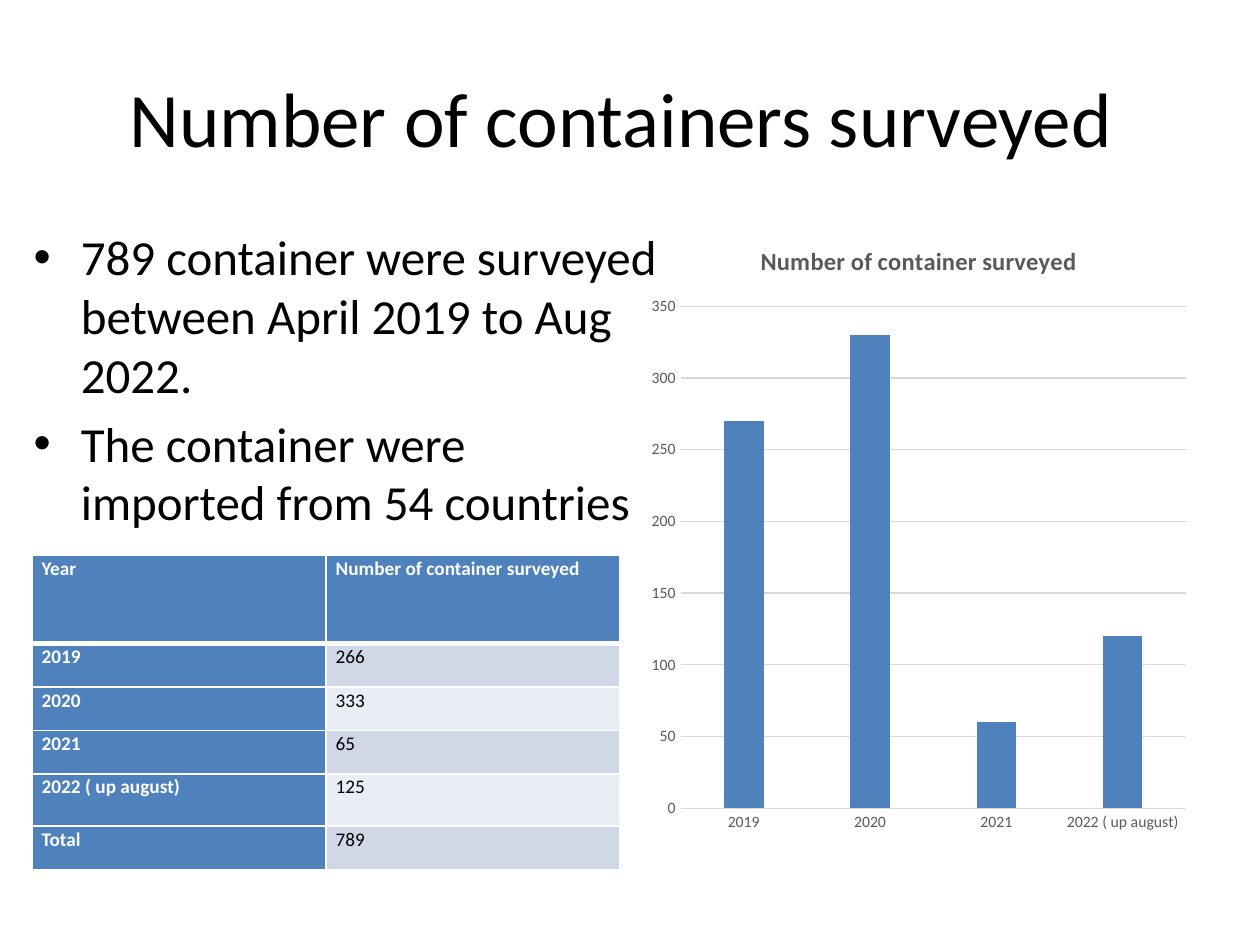
from dataclasses import dataclass
from lxml.etree import SubElement as Sub
from pptx import Presentation
from pptx.chart.data import CategoryChartData as Data
from pptx.dml.color import RGBColor as Rgb
from pptx.enum.chart import XL_CHART_TYPE as Kind, XL_TICK_MARK as Tick
from pptx.enum.text import MSO_ANCHOR as Anchor, MSO_AUTO_SIZE as Fit, PP_ALIGN as Align
from pptx.oxml.ns import qn
from pptx.util import Pt


@dataclass(frozen=True)
class Theme:
    font: str = "Calibri"
    black: str = "000000"
    white: str = "FFFFFF"
    blue: str = "4F81BD"
    grey: str = "595959"
    rule: str = "D9D9D9"
    bands: tuple = ("D0D8E8", "E9EDF4")
    title: int = 44
    body: int = 28
    head: int = 14
    cell: int = 11
    axis: int = 9


class Page:
    def __init__(self, deck, theme):
        self.theme = theme
        self.slide = deck.slides.add_slide(deck.slide_layouts[1])

    def style(self, font, size, color, bold=False):
        font.name, font.size, font.bold = self.theme.font, Pt(size), bold
        font.color.rgb = Rgb.from_string(color)

    def place(self, shape, box):
        shape.left, shape.top, shape.width, shape.height = map(Pt, box)
        shape.text_frame.auto_size = Fit.NONE

    def title(self, text, box):
        shape = self.slide.shapes.title
        self.place(shape, box)
        shape.text_frame.vertical_anchor = Anchor.MIDDLE
        para = shape.text_frame.paragraphs[0]
        para.text, para.alignment = text, Align.CENTER
        self.style(para.font, self.theme.title, self.theme.black)

    def bullets(self, items, box):
        shape = self.slide.placeholders[1]
        self.place(shape, box)
        frame = shape.text_frame
        frame.text = "\n".join(items)
        for para in frame.paragraphs:
            props = para._p.get_or_add_pPr()
            props.set("marL", str(Pt(27)))
            props.set("indent", str(Pt(-27)))
            Sub(props, qn("a:buChar")).set("char", "•")
            self.style(para.font, self.theme.body, self.theme.black)
        frame.paragraphs[0].space_before = Pt(0)

    def chart(self, name, cats, vals, box):
        look = self.theme
        data = Data()
        data.categories = cats
        data.add_series(name, vals)
        chart = self.slide.shapes.add_chart(
            Kind.COLUMN_CLUSTERED, *map(Pt, box), data).chart
        self.style(chart.font, look.axis, look.grey)
        chart.has_legend = False
        chart.has_title = True
        para = chart.chart_title.text_frame.paragraphs[0]
        para.text = name
        self.style(para.font, look.head, look.grey, True)

        plot = chart.plots[0]
        plot.gap_width, plot.overlap = 219, -27
        plot.vary_by_categories = False
        fill = plot.series[0].format.fill
        fill.solid()
        fill.fore_color.rgb = Rgb.from_string(look.blue)

        years, scale = chart.category_axis, chart.value_axis
        scale.minimum_scale, scale.maximum_scale, scale.major_unit = 0, 350, 50
        for axis in (years, scale):
            axis.major_tick_mark = axis.minor_tick_mark = Tick.NONE
            self.style(axis.tick_labels.font, look.axis, look.grey)
        scale.format.line.fill.background()
        for line in (years.format.line, scale.major_gridlines.format.line):
            line.width = Pt(0.75)
            line.color.rgb = Rgb.from_string(look.rule)

    def border(self, cell, low):
        """Draw white edges round a cell, the bottom one low points wide."""
        props = cell._tc.get_or_add_tcPr()
        for side, width in (("L", 1), ("R", 1), ("T", 1), ("B", low)):
            line = Sub(props, qn(f"a:ln{side}"), w=str(Pt(width)))
            Sub(Sub(line, qn("a:solidFill")), qn("a:srgbClr"), val=self.theme.white)

    def table(self, rows, highs, box):
        look = self.theme
        table = self.slide.shapes.add_table(
            len(rows), len(rows[0]), *map(Pt, box)).table
        for r, (row, high) in enumerate(zip(rows, highs)):
            table.rows[r].height = Pt(high)
            for c, text in enumerate(row):
                cell = table.cell(r, c)
                strong = r == 0 or c == 0
                self.border(cell, 3 if r == 0 else 1)
                cell.margin_left = cell.margin_right = Pt(5.4)
                cell.margin_top = cell.margin_bottom = Pt(0)
                cell.fill.solid()
                cell.fill.fore_color.rgb = Rgb.from_string(
                    look.blue if strong else look.bands[(r - 1) % 2])
                para = cell.text_frame.paragraphs[0]
                para.text, para.line_spacing = str(text), 1.07
                self.style(para.font, look.cell,
                           look.white if strong else look.black, strong)


def main():
    deck = Presentation()
    deck.slide_width, deck.slide_height = Pt(720), Pt(540)
    page = Page(deck, Theme())

    years = ["2019", "2020", "2021", "2022 ( up august)"]
    counts = [266, 333, 65, 125]
    tens = [round(count, -1) for count in counts]
    name = "Number of container surveyed"

    page.title("Number of containers surveyed ", (36, 21.6, 648, 90))
    page.bullets(["789 container were surveyed between April 2019 to Aug 2022.",
                  "The container were imported from 54 countries"],
                 (12, 126, 372, 356.4))
    page.chart(name, years, tens, (366, 126, 318, 356.4))
    rows = [("Year", name), *zip(years, counts), ("Total", sum(counts))]
    page.table(rows, (50.5, 24.8, 24.8, 24.8, 29.8, 24.8), (18.4, 317.4, 336, 179.5))
    deck.save("out.pptx")


if __name__ == "__main__":
    main()
